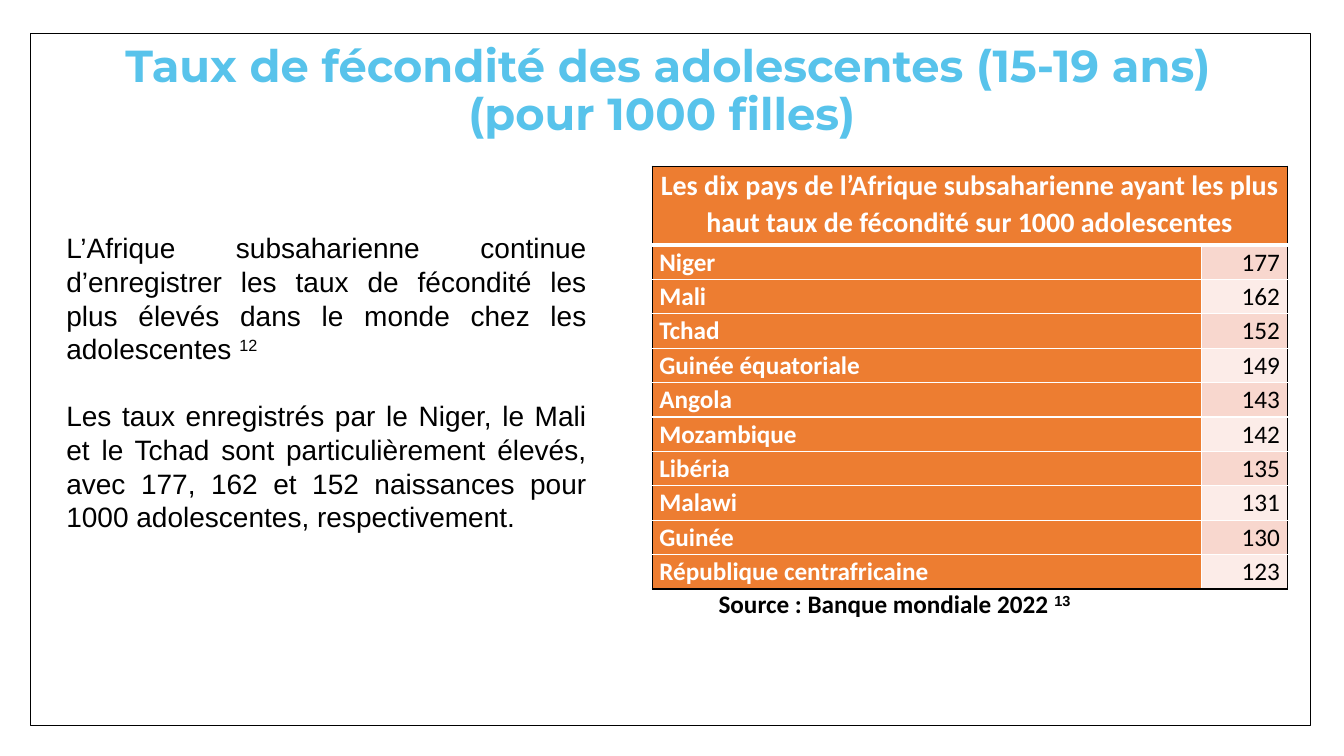
from dataclasses import dataclass

from pptx import Presentation
from pptx.dml.color import RGBColor
from pptx.enum.shapes import MSO_SHAPE as Preset
from pptx.enum.text import MSO_ANCHOR as Anchor, PP_ALIGN as Align
from pptx.oxml import parse_xml
from pptx.oxml.ns import nsdecls
from pptx.util import Pt


@dataclass(frozen=True)
class Theme:
    black: str = "000000"
    white: str = "FFFFFF"
    sky: str = "58C3EB"
    orange: str = "ED7D31"
    bands: tuple = ("F8D7CE", "FCECE8")
    title_font: str = "Montserrat"
    body_font: str = "Arial"
    table_font: str = "Calibri"
    title_size: int = 32
    large: int = 20
    small: int = 18


THEME = Theme()

TITLE = "Taux de fécondité des adolescentes (15-19 ans)\v(pour 1000 filles) "
REGION = ("L’Afrique subsaharienne continue d’enregistrer les taux de fécondité "
          "les plus élevés dans le monde chez les adolescentes ")
COUNTRIES = ("Les taux enregistrés par le Niger, le Mali et le Tchad sont "
             "particulièrement élevés, avec 177, 162 et 152 naissances pour "
             "1000 adolescentes, respectivement. ")
HEADING = ("Les dix pays de l’Afrique subsaharienne ayant les plus haut taux "
           "de fécondité sur 1000 adolescentes")
RATES = [("Niger", 177), ("Mali", 162), ("Tchad", 152),
         ("Guinée équatoriale", 149), ("Angola", 143), ("Mozambique", 142),
         ("Libéria", 135), ("Malawi", 131), ("Guinée", 130),
         ("République centrafricaine", 123)]


def write(paragraph, text, *, font, size, color=THEME.black, bold=False,
          align=Align.LEFT, spacing=None, before=None, after=None,
          note=None, note_font=None):
    """Fill a paragraph; note is a superscript reference after the text."""
    paragraph.alignment = align
    paragraph.line_spacing = spacing
    paragraph.space_before = before
    paragraph.space_after = after
    paragraph.text = text
    if note:
        reference = paragraph.add_run()
        reference.text = note
        reference.font._element.set("baseline", "30000")
    for run in paragraph.runs:
        run.font.name = font
        run.font.size = Pt(size)
        run.font.bold = bold
        run.font.color.rgb = RGBColor.from_string(color)
    if note_font:
        reference.font.name = note_font


def add_text_frame(slide, left, top, width, height, anchor=Anchor.TOP):
    frame = slide.shapes.add_textbox(
        Pt(left), Pt(top), Pt(width), Pt(height)).text_frame
    frame.word_wrap = True
    frame.vertical_anchor = anchor
    return frame


def add_border(slide):
    border = slide.shapes.add_shape(
        Preset.RECTANGLE, Pt(21.6), Pt(24), Pt(914.4), Pt(494))
    border.shadow.inherit = False
    border.fill.background()
    border.line.color.rgb = RGBColor.from_string(THEME.black)
    border.line.width = Pt(0.75)


def style_cell(cell, fill, edges):
    """Set fill, insets and edges, given as side -> (colour, width)."""
    cell.margin_left = cell.margin_right = Pt(5.2)
    cell.margin_top = cell.margin_bottom = 0
    properties = cell._tc.get_or_add_tcPr()
    for side in "LRTB":
        color, width = edges.get(side, (THEME.white, 1))
        properties.append(parse_xml(
            f'<a:ln{side} {nsdecls("a")} w="{Pt(width)}"><a:solidFill>'
            f'<a:srgbClr val="{color}"/></a:solidFill></a:ln{side}>'))
    cell.fill.solid()
    cell.fill.fore_color.rgb = RGBColor.from_string(fill)


def add_rate_table(slide):
    table = slide.shapes.add_table(
        len(RATES) + 1, 2, Pt(465.8), Pt(118.8), Pt(453.6), Pt(302.2)).table
    for column, width in zip(table.columns, (392.4, 61.2)):
        column.width = Pt(width)
    for index, row in enumerate(table.rows):
        row.height = Pt(24.6 if index else 56.2)

    outer = (THEME.black, 1)
    common = dict(font=THEME.table_font, spacing=1.07, after=Pt(8))

    # Heading across both columns
    heading = table.cell(0, 0)
    heading.merge(table.cell(0, 1))
    heading_edges = {"L": outer, "R": outer, "T": outer, "B": (THEME.white, 3)}
    for cell in table.rows[0].cells:
        style_cell(cell, THEME.orange, heading_edges)
    write(heading.text_frame.paragraphs[0], HEADING, size=THEME.large,
          color=THEME.white, bold=True, align=Align.CENTER, **common)

    # One row per country
    for index, (country, rate) in enumerate(RATES, start=1):
        name, value = table.rows[index].cells
        top = {"T": (THEME.white, 3)} if index == 1 else {}
        bottom = {"B": outer} if index == len(RATES) else {}
        style_cell(name, THEME.orange, {"L": outer, **top, **bottom})
        style_cell(value, THEME.bands[(index - 1) % 2],
                   {"R": outer, **top, **bottom})
        write(name.text_frame.paragraphs[0], country, size=THEME.small,
              color=THEME.white, bold=True, **common)
        write(value.text_frame.paragraphs[0], str(rate), size=THEME.small,
              align=Align.RIGHT, **common)


def main():
    deck = Presentation()
    deck.slide_width, deck.slide_height = Pt(960), Pt(540)
    slide = deck.slides.add_slide(deck.slide_layouts[6])
    add_border(slide)

    # Title
    title = add_text_frame(slide, 49.7, 59.8, 855.4, 43.9, Anchor.BOTTOM)
    write(title.paragraphs[0], TITLE, font=THEME.title_font,
          size=THEME.title_size, color=THEME.sky, bold=True,
          align=Align.CENTER, spacing=0.9)

    # Commentary
    comment = add_text_frame(slide, 40.3, 161.3, 385.9, 217.4)
    body = dict(font=THEME.body_font, size=THEME.large, align=Align.JUSTIFY)
    write(comment.paragraphs[0], REGION, note="12", **body)
    write(comment.add_paragraph(), COUNTRIES, before=Pt(24), **body)

    # Table and its source
    add_rate_table(slide)
    source = add_text_frame(slide, 506.2, 416.9, 276.5, 28.8)
    write(source.paragraphs[0], "Source : Banque mondiale 2022 ",
          font=THEME.table_font, size=THEME.small, bold=True,
          note="13", note_font=THEME.body_font)

    deck.save("out.pptx")


if __name__ == "__main__":
    main()
